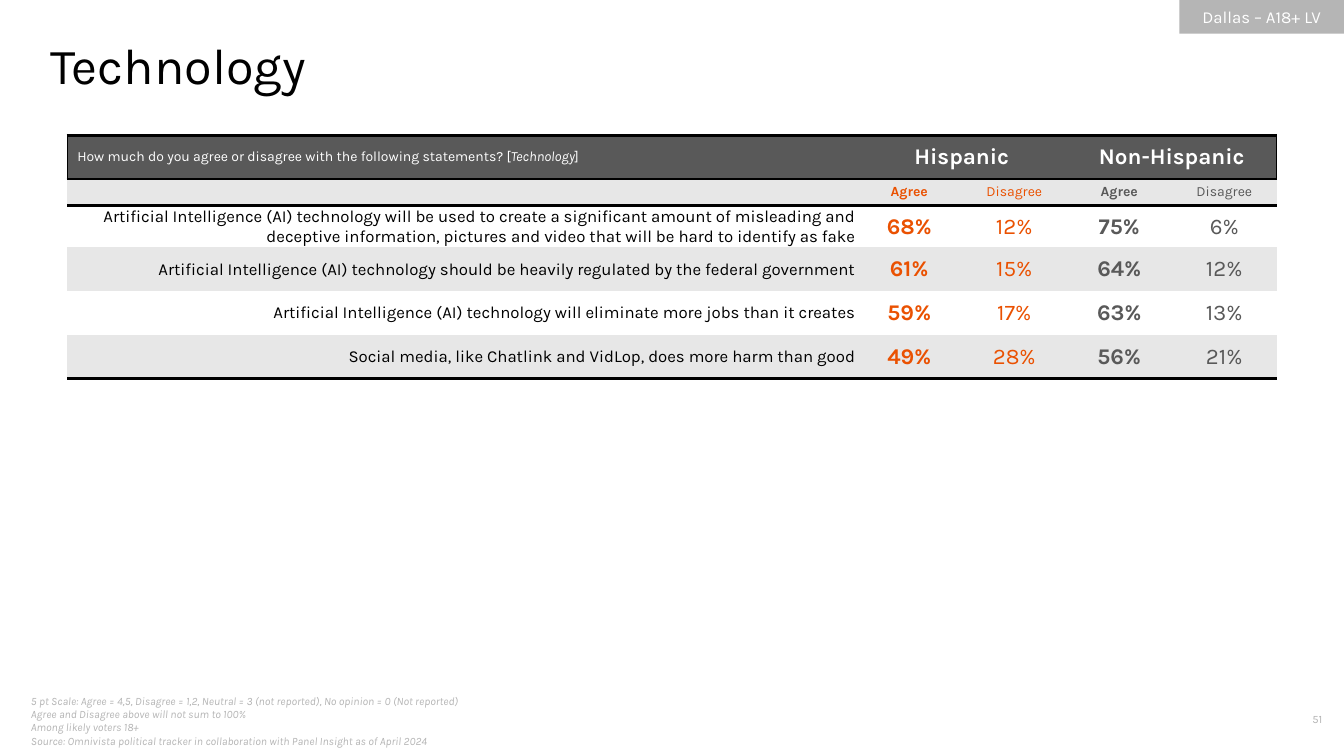
from dataclasses import dataclass

from lxml import etree
from pptx import Presentation
from pptx.dml.color import RGBColor
from pptx.enum.shapes import MSO_SHAPE
from pptx.enum.text import MSO_ANCHOR, MSO_AUTO_SIZE, PP_ALIGN
from pptx.oxml.ns import qn
from pptx.util import Inches, Pt

LEFT, CENTER, RIGHT = PP_ALIGN.LEFT, PP_ALIGN.CENTER, PP_ALIGN.RIGHT
TOP, MIDDLE = MSO_ANCHOR.TOP, MSO_ANCHOR.MIDDLE
RECTANGLE = MSO_SHAPE.RECTANGLE
TITLE_ONLY_LAYOUT = 5
PLAIN_TABLE_STYLE = "{2D5ABB26-0587-4C30-8999-92F81FD0307C}"

# The slide is a grid of 80 columns by 45 rows of square units.
GRID_COLUMNS, GRID_ROWS = 80, 45
SLIDE_WIDTH, SLIDE_HEIGHT = Inches(13.33), Inches(7.5)


@dataclass(frozen=True)
class Theme:
    font: str = "Karla"
    black: str = "000000"
    white: str = "FFFFFF"
    orange: str = "EA5101"
    dark: str = "595959"
    band: str = "E7E7E7"
    muted: str = "B5B5B5"
    title_size: float = 36
    value_size: float = 16
    label_size: float = 12
    small_size: float = 10
    note_size: float = 8
    rule: float = 2.25
    edge: float = 1


THEME = Theme()


@dataclass(frozen=True)
class Style:
    size: float
    color: str
    bold: bool = False
    italic: bool = False


@dataclass(frozen=True)
class Area:
    column: float
    row: float
    columns: float
    rows: float

    def box(self) -> tuple[int, int, int, int]:
        return across(self.column), down(self.row), across(self.columns), down(self.rows)


@dataclass(frozen=True)
class Statement:
    text: str
    shares: tuple[int, int, int, int]
    rows: float = 2.6


TITLE_AREA = Area(3, 2, 72, 3.65)
TAG_AREA = Area(70.2, 0, 9.8, 2)
NOTES_AREA = Area(1.25, 41.7, 30.7, 2.4)
NUMBER_AREA = Area(74, 42.1, 5.3, 1.6)
TABLE_AREA = Area(4, 8.05, 72, 14.15)
TABLE_COLUMNS = (47, 6.25, 6.25, 6.25, 6.25)
HEADER_ROWS = (2.6, 1.5)

GROUPS = (("Hispanic", THEME.orange), ("Non-Hispanic", THEME.dark))
ANSWERS = (("Agree", True), ("Disagree", False))
STATEMENTS = (
    Statement("Artificial Intelligence (AI) technology will be used to create a significant "
              "amount of misleading and deceptive information, pictures and video that will "
              "be hard to identify as fake", (68, 12, 75, 6), 2.35),
    Statement("Artificial Intelligence (AI) technology should be heavily regulated by the "
              "federal government", (61, 15, 64, 12)),
    Statement("Artificial Intelligence (AI) technology will eliminate more jobs than it creates",
              (59, 17, 63, 13)),
    Statement("Social media, like Chatlink and VidLop, does more harm than good",
              (49, 28, 56, 21)),
)
NOTES = (
    "5 pt Scale: Agree = 4,5, Disagree = 1,2, Neutral = 3 (not reported), "
    "No opinion = 0 (Not reported)",
    "Agree and Disagree above will not sum to 100%",
    "Among likely voters 18+",
    "Source: Omnivista political tracker in collaboration with Panel Insight as of April 2024",
)


def across(columns: float) -> int:
    return round(SLIDE_WIDTH * columns / GRID_COLUMNS)


def down(rows: float) -> int:
    return round(SLIDE_HEIGHT * rows / GRID_ROWS)


def add_run(paragraph, text: str, style: Style) -> None:
    run = paragraph.add_run()
    run.text = text
    font = run.font
    font.name, font.size = THEME.font, Pt(style.size)
    font.bold, font.italic = style.bold, style.italic
    font.color.rgb = RGBColor.from_string(style.color)


def write(frame, lines, style: Style, align=LEFT, anchor=MIDDLE) -> None:
    frame.word_wrap = True
    frame.vertical_anchor = anchor
    for index, line in enumerate(lines):
        paragraph = frame.add_paragraph() if index else frame.paragraphs[0]
        paragraph.alignment = align
        add_run(paragraph, line, style)


def add_title(slide) -> None:
    title = slide.shapes.title
    title.left, title.top, title.width, title.height = TITLE_AREA.box()
    frame = title.text_frame
    frame.margin_left = frame.margin_top = frame.margin_right = frame.margin_bottom = 0
    frame.auto_size = MSO_AUTO_SIZE.NONE
    write(frame, ["Technology"], Style(THEME.title_size, THEME.black), anchor=TOP)
    title.text_frame.paragraphs[0].line_spacing = 1


def add_tag(slide) -> None:
    tag = slide.shapes.add_shape(RECTANGLE, *TAG_AREA.box())
    tag.shadow.inherit = False
    tag.fill.solid()
    tag.fill.fore_color.rgb = RGBColor.from_string(THEME.muted)
    tag.line.fill.background()
    write(tag.text_frame, ["Dallas – A18+ LV"], Style(THEME.label_size, THEME.white), CENTER)


def set_border(cell, side: str, width: float) -> None:
    line = etree.SubElement(cell._tc.get_or_add_tcPr(), qn(f"a:ln{side}"), w=str(Pt(width)))
    fill = etree.SubElement(line, qn("a:solidFill"))
    etree.SubElement(fill, qn("a:srgbClr"), val=THEME.black)


def format_cells(table) -> None:
    """Draw the rules and bands; borders must come before the fill in the XML."""
    last_row, last_column = len(table.rows) - 1, len(table.columns) - 1
    for row_index, row in enumerate(table.rows):
        header = row_index == 0
        for column_index, cell in enumerate(row.cells):
            borders = {
                "L": THEME.edge if header and column_index == 0 else 0,
                "R": THEME.edge if header and column_index >= last_column - 1 else 0,
                "T": THEME.rule if row_index <= 1 else 0,
                "B": THEME.rule if row_index in (0, last_row) else 0,
            }
            for side, width in borders.items():
                if width:
                    set_border(cell, side, width)
            band = THEME.band if row_index % 2 else THEME.white
            cell.fill.solid()
            cell.fill.fore_color.rgb = RGBColor.from_string(THEME.dark if header else band)
            cell.vertical_anchor = MIDDLE
            if row_index >= len(HEADER_ROWS):
                cell.margin_left = cell.margin_top = cell.margin_right = Inches(0.01)
                cell.margin_bottom = 0


def fill_cell(cell, text: str, style: Style, align=CENTER) -> None:
    paragraph = cell.text_frame.paragraphs[0]
    paragraph.alignment = align
    add_run(paragraph, text, style)


def add_table(slide) -> None:
    heights = HEADER_ROWS + tuple(statement.rows for statement in STATEMENTS)
    frame = slide.shapes.add_table(len(heights), len(TABLE_COLUMNS), *TABLE_AREA.box())
    table = frame.table
    table.first_row = table.horz_banding = False
    table._tbl.tblPr.find(qn("a:tableStyleId")).text = PLAIN_TABLE_STYLE
    for column, width in zip(table.columns, TABLE_COLUMNS):
        column.width = across(width)
    for row, height in zip(table.rows, heights):
        row.height = down(height)
    format_cells(table)

    question = table.cell(0, 0).text_frame.paragraphs[0]
    plain = Style(THEME.small_size, THEME.white)
    add_run(question, "How much do you agree or disagree with the following statements? [", plain)
    add_run(question, "Technology", Style(THEME.small_size, THEME.white, italic=True))
    add_run(question, "]", plain)
    corner = table.cell(1, 0).text_frame.paragraphs[0]
    etree.SubElement(corner._p, qn("a:endParaRPr"), sz=str(THEME.small_size * 100))

    for row, statement in enumerate(STATEMENTS, len(HEADER_ROWS)):
        fill_cell(table.cell(row, 0), statement.text, Style(THEME.label_size, THEME.black), RIGHT)
    for group_index, (group, color) in enumerate(GROUPS):
        first = 1 + group_index * len(ANSWERS)
        heading = table.cell(0, first)
        heading.merge(table.cell(0, first + len(ANSWERS) - 1))
        fill_cell(heading, group, Style(THEME.value_size, THEME.white, bold=True))
        for column, (answer, bold) in enumerate(ANSWERS, first):
            fill_cell(table.cell(1, column), answer, Style(THEME.small_size, color, bold))
            for row, statement in enumerate(STATEMENTS, len(HEADER_ROWS)):
                fill_cell(table.cell(row, column), f"{statement.shares[column - 1]}%",
                          Style(THEME.value_size, color, bold))


def main() -> None:
    presentation = Presentation()
    presentation.slide_width, presentation.slide_height = SLIDE_WIDTH, SLIDE_HEIGHT
    slide = presentation.slides.add_slide(presentation.slide_layouts[TITLE_ONLY_LAYOUT])
    notes = slide.shapes.add_textbox(*NOTES_AREA.box())
    write(notes.text_frame, NOTES, Style(THEME.note_size, THEME.muted, italic=True))
    number = slide.shapes.add_textbox(*NUMBER_AREA.box())
    write(number.text_frame, ["51"], Style(THEME.note_size, THEME.muted), RIGHT, TOP)
    add_tag(slide)
    add_title(slide)
    add_table(slide)
    presentation.save("out.pptx")


if __name__ == "__main__":
    main()
